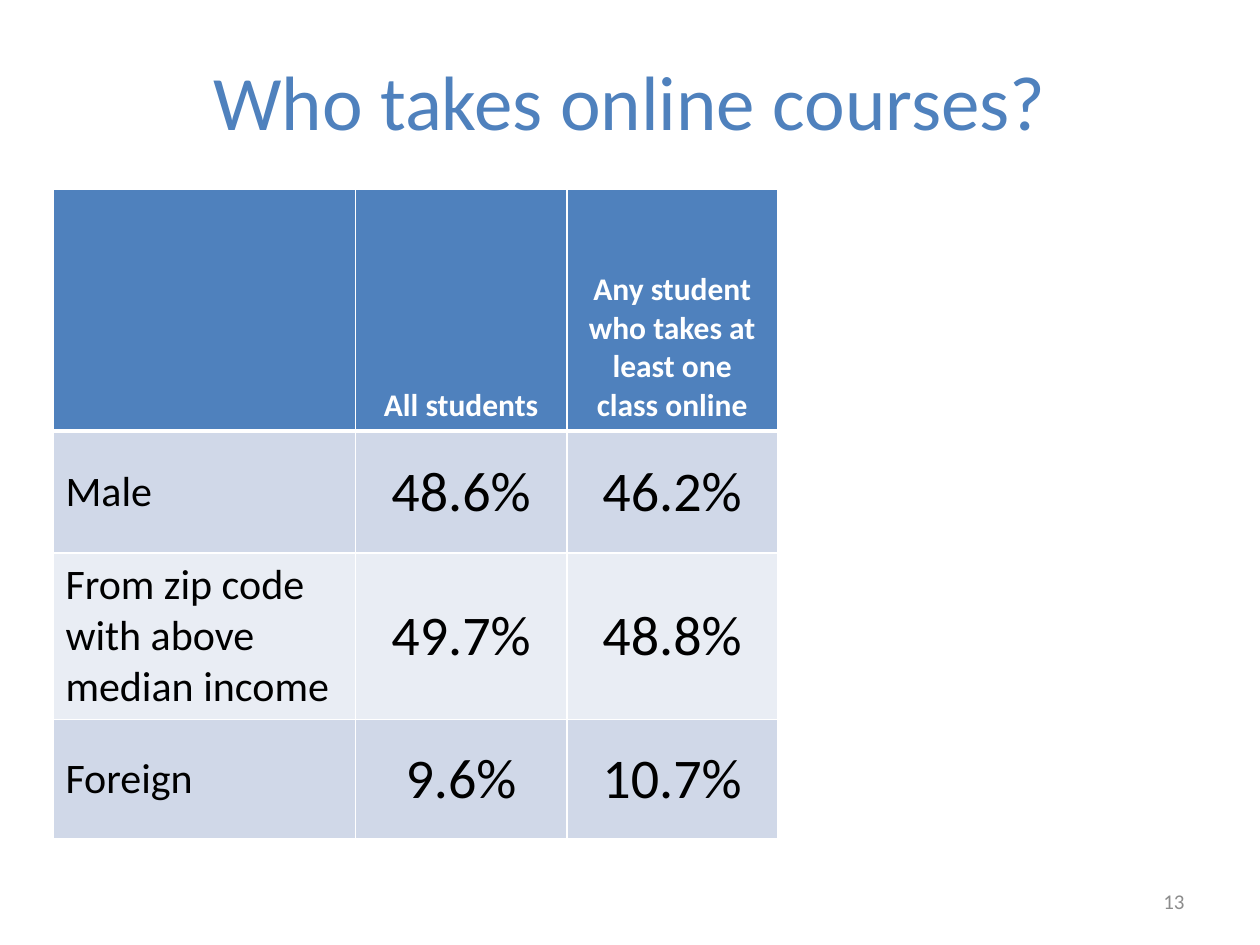
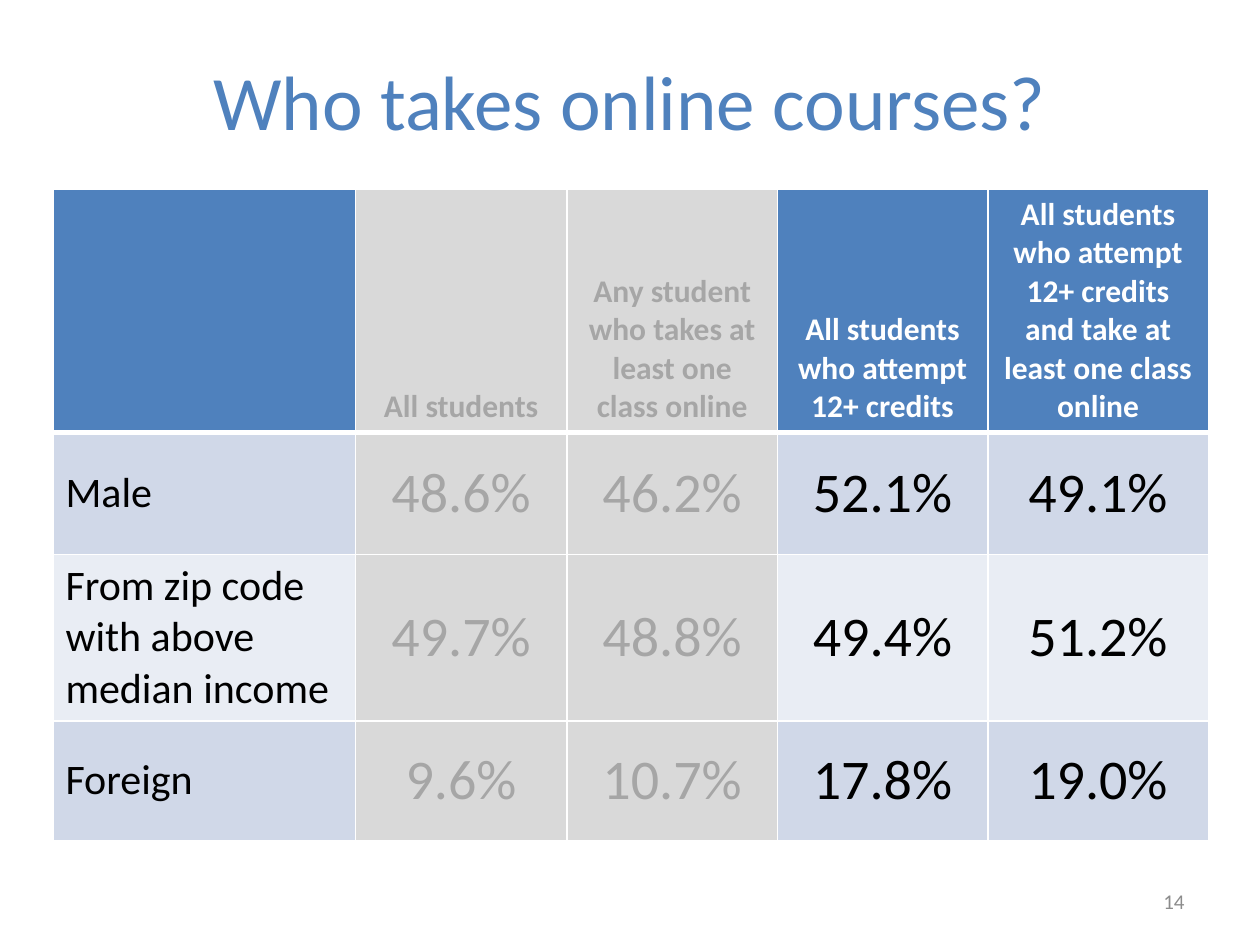
import pptx
import pptx.dml.color
import pptx.enum.text
import pptx.oxml.ns
import pptx.util
from lxml import etree

FONT = "Calibri"
COLORS = {
    "accent": "4F81BD",
    "band_dark": "D0D8E8",
    "band_light": "E9EDF4",
    "muted_fill": "D9D9D9",
    "muted_text": "A6A6A6",
    "number": "8C8C8C",
    "white": "FFFFFF",
    "black": "000000",
}
ALIGN = pptx.enum.text.PP_ALIGN
ANCHOR = pptx.enum.text.MSO_ANCHOR
Inches = pptx.util.Inches

# Table content and grid
TITLE = "Who takes online courses?"
ROWS = [
    ["", "All students", "Any student who takes at least one class online",
     "All students who attempt 12+ credits",
     "All students who attempt 12+ credits and take at least one class online"],
    ["Male", "48.6%", "46.2%", "52.1%", "49.1%"],
    ["From zip code with above median income", "49.7%", "48.8%", "49.4%", "51.2%"],
    ["Foreign", "9.6%", "10.7%", "17.8%", "19.0%"],
]
COLUMN_WIDTHS = [2.4, 1.68, 1.67, 1.67, 1.75]
ROW_HEIGHTS = [1.92, 0.97, 1.32, 0.95]

# Each page: number, visible columns, columns greyed out
PAGES = [(13, 3, ()), (14, 5, (1, 2))]


def write(frame, text, size, color, align, anchor, bold=False):
    frame.text = text
    para = frame.paragraphs[0]
    para.alignment = align
    para.font.name = FONT
    para.font.size = pptx.util.Pt(size)
    para.font.bold = bold
    para.font.color.rgb = pptx.dml.color.RGBColor.from_string(COLORS[color])
    frame.vertical_anchor = anchor


def add_border(cell, side, points):
    properties = cell._tc.get_or_add_tcPr()
    qn = pptx.oxml.ns.qn
    line = etree.SubElement(properties, qn("a:ln" + side), w=str(pptx.util.Pt(points)))
    fill = etree.SubElement(line, qn("a:solidFill"))
    etree.SubElement(fill, qn("a:srgbClr"), val=COLORS["white"])


deck = pptx.Presentation()
deck.slide_width, deck.slide_height = Inches(10), Inches(7.5)
title_only = deck.slide_layouts[5]

for number, column_count, muted_columns in PAGES:
    page = deck.slides.add_slide(title_only)

    # Title
    title = page.shapes.title
    title.left, title.top = Inches(0.5), Inches(0.17)
    title.width, title.height = Inches(9), Inches(1.25)
    write(title.text_frame, TITLE, 44, "accent", ALIGN.CENTER, ANCHOR.MIDDLE)

    # Table
    widths = COLUMN_WIDTHS[:column_count]
    table = page.shapes.add_table(
        len(ROWS), column_count, Inches(0.42), Inches(1.5),
        Inches(sum(widths)), Inches(sum(ROW_HEIGHTS))).table
    for column, width in zip(table.columns, widths):
        column.width = Inches(width)
    for row, height in zip(table.rows, ROW_HEIGHTS):
        row.height = Inches(height)

    for r, texts in enumerate(ROWS):
        for c, text in enumerate(texts[:column_count]):
            cell = table.cell(r, c)
            header, label = r == 0, c == 0
            if header:
                fill, color, size = "accent", "white", 18
            else:
                fill = "band_dark" if r % 2 else "band_light"
                color, size = "black", 24 if label else 32
            if c in muted_columns:
                fill, color = "muted_fill", "muted_text"

            # White rules, heavier below the header
            for side, points in (("L", 1), ("R", 1), ("T", 3 if r == 1 else 1),
                                 ("B", 3 if header else 1)):
                add_border(cell, side, points)
            cell.fill.solid()
            cell.fill.fore_color.rgb = pptx.dml.color.RGBColor.from_string(COLORS[fill])
            write(cell.text_frame, text, size, color,
                  ALIGN.LEFT if label else ALIGN.CENTER, ANCHOR.MIDDLE, header)
            cell.vertical_anchor = ANCHOR.BOTTOM if header else ANCHOR.MIDDLE

    # Page number
    box = page.shapes.add_textbox(Inches(7.17), Inches(6.95), Inches(2.33), Inches(0.4))
    box.text_frame.word_wrap = True
    write(box.text_frame, str(number), 12, "number", ALIGN.RIGHT, ANCHOR.MIDDLE)

deck.save("out.pptx")
